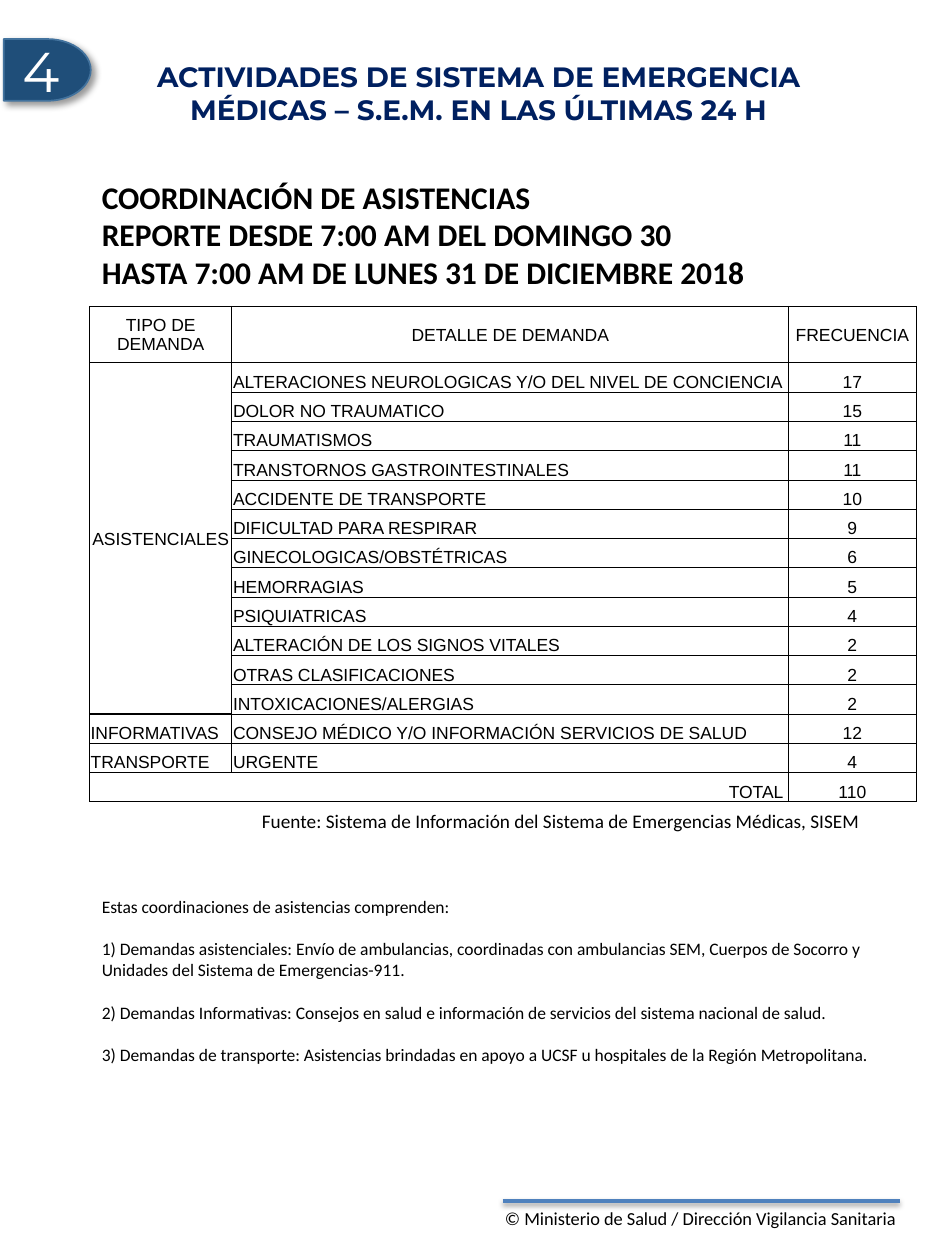
from lxml import etree
from pptx import Presentation
from pptx.dml.color import RGBColor
from pptx.enum import shapes, text
from pptx.oxml import ns
from pptx.util import Inches, Pt

COLORS = {"black": "000000", "white": "FFFFFF", "navy": "002060",
          "badge": "1F4E79", "edge": "43739E", "rule": "4F81BD"}

HEAD = ["TIPO DE DEMANDA", "DETALLE DE DEMANDA", "FRECUENCIA"]
GROUPS = [
    ("ASISTENCIALES", [
        ("ALTERACIONES NEUROLOGICAS Y/O DEL NIVEL DE CONCIENCIA", 17),
        ("DOLOR NO TRAUMATICO", 15),
        ("TRAUMATISMOS", 11),
        ("TRANSTORNOS GASTROINTESTINALES", 11),
        ("ACCIDENTE DE TRANSPORTE", 10),
        ("DIFICULTAD PARA RESPIRAR", 9),
        ("GINECOLOGICAS/OBSTÉTRICAS", 6),
        ("HEMORRAGIAS", 5),
        ("PSIQUIATRICAS", 4),
        ("ALTERACIÓN DE LOS SIGNOS VITALES", 2),
        ("OTRAS CLASIFICACIONES", 2),
        ("INTOXICACIONES/ALERGIAS", 2)]),
    ("INFORMATIVAS", [
        ("CONSEJO MÉDICO Y/O INFORMACIÓN SERVICIOS DE SALUD", 12)]),
    ("TRANSPORTE", [("URGENTE", 4)]),
]
TITLE = ["ACTIVIDADES DE SISTEMA DE EMERGENCIA MÉDICAS – S.E.M. EN LAS ÚLTIMAS 24 H"]
REPORT = ["COORDINACIÓN DE ASISTENCIAS",
          "REPORTE DESDE 7:00 AM DEL DOMINGO 30 HASTA 7:00 AM DE LUNES 31 DE DICIEMBRE 2018"]
SOURCE = ["Fuente: Sistema de Información del Sistema de Emergencias Médicas, SISEM"]
FOOTER = ["© Ministerio de Salud / Dirección Vigilancia Sanitaria"]
NOTES = [
    "Estas coordinaciones de asistencias comprenden:",
    "1) Demandas asistenciales: Envío de ambulancias, coordinadas con ambulancias SEM, "
    "Cuerpos de Socorro y Unidades del Sistema de Emergencias-911.",
    "2) Demandas Informativas: Consejos en salud e información de servicios del sistema "
    "nacional de salud.",
    "3) Demandas de transporte: Asistencias brindadas en apoyo a UCSF u hospitales de la "
    "Región Metropolitana."]

COLS = [1.13, 4.42, 1.01]
TABLE = (0.71, 2.43, sum(COLS), 3.94)
HEAD_H = 0.45

LEFT, MID, RIGHT = text.PP_ALIGN.LEFT, text.PP_ALIGN.CENTER, text.PP_ALIGN.RIGHT
TOP, CENTER, BOTTOM = (text.MSO_ANCHOR.TOP, text.MSO_ANCHOR.MIDDLE,
                       text.MSO_ANCHOR.BOTTOM)


def rgb(name):
    return RGBColor.from_string(COLORS[name])


def write(frame, lines, size, face="Calibri", color="black", bold=False,
          align=LEFT, gap=0):
    for i, line in enumerate(lines):
        para = frame.paragraphs[0] if i == 0 else frame.add_paragraph()
        para.alignment = align
        if i and gap:
            para.space_before = Pt(gap)
        run = para.add_run()
        run.text = line
        look = {"size": Pt(size), "name": face, "bold": bold}
        for key, val in look.items():
            setattr(run.font, key, val)
        run.font.color.rgb = rgb(color)


def label(slide, place, lines, size, wrap=True, anchor=TOP, pad=None, **look):
    frame = slide.shapes.add_textbox(*map(Inches, place)).text_frame
    frame.word_wrap = wrap
    frame.vertical_anchor = anchor
    if pad is not None:
        for side in ("left", "right", "top", "bottom"):
            setattr(frame, "margin_" + side, Inches(pad))
    write(frame, lines, size, **look)


def shade(shape, alpha, blur, dist, angle):
    """Give the shape an outer shadow; sizes in points, alpha in percent."""
    box = etree.SubElement(shape._element.spPr, ns.qn("a:effectLst"))
    cast = etree.SubElement(box, ns.qn("a:outerShdw"), blurRad=str(Pt(blur)),
                            dist=str(Pt(dist)), dir=str(angle * 60000),
                            rotWithShape="0")
    hue = etree.SubElement(cast, ns.qn("a:srgbClr"), val=COLORS["black"])
    etree.SubElement(hue, ns.qn("a:alpha"), val=str(alpha * 1000))


def edge(cell, thick=""):
    """Draw the four borders; the sides named in thick get 1 point."""
    props = cell._tc.get_or_add_tcPr()
    for i, side in enumerate("LRTB"):
        width = Pt(1 if side in thick else 0.5)
        line = etree.Element(ns.qn("a:ln" + side), w=str(width))
        fill = etree.SubElement(line, ns.qn("a:solidFill"))
        etree.SubElement(fill, ns.qn("a:srgbClr"), val=COLORS["black"])
        props.insert(i, line)


def fill_cell(cell, words, align, anchor=BOTTOM):
    write(cell.text_frame, [words], 10, face="Arial", align=align)
    cell.vertical_anchor = anchor


def add_grid(slide):
    count = 2 + sum(len(items) for _, items in GROUPS)
    grid = slide.shapes.add_table(count, len(COLS), *map(Inches, TABLE)).table
    grid.first_row = grid.horz_banding = False
    for col, width in zip(grid.columns, COLS):
        col.width = Inches(width)
    step = (TABLE[3] - HEAD_H) / (count - 1)
    for i, row in enumerate(grid.rows):
        row.height = Inches(step if i else HEAD_H)

    last = len(GROUPS[0][1])
    thick = {(last, 0): "B", (last + 1, 0): "T"}
    pads = {"left": 0.01, "right": 0.01, "top": 0.01, "bottom": 0}
    for r in range(count):
        for c in range(len(COLS)):
            cell = grid.cell(r, c)
            cell.fill.background()
            edge(cell, thick.get((r, c), ""))
            for side, pad in pads.items():
                setattr(cell, "margin_" + side, Inches(pad))

    for c, words in enumerate(HEAD):
        fill_cell(grid.cell(0, c), words, MID, CENTER)
    r = 1
    for kind, items in GROUPS:
        many = len(items) > 1
        first = grid.cell(r, 0)
        if many:
            first.merge(grid.cell(r + len(items) - 1, 0))
        fill_cell(first, kind, MID if many else LEFT, CENTER if many else BOTTOM)
        for words, number in items:
            fill_cell(grid.cell(r, 1), words, LEFT)
            fill_cell(grid.cell(r, 2), str(number), MID)
            r += 1
    grid.cell(r, 0).merge(grid.cell(r, 1))
    fill_cell(grid.cell(r, 0), "TOTAL ", RIGHT)
    total = sum(number for _, items in GROUPS for _, number in items)
    fill_cell(grid.cell(r, 2), str(total), MID)


def main():
    deck = Presentation()
    deck.slide_width, deck.slide_height = Inches(7.5), Inches(10)
    slide = deck.slides.add_slide(deck.slide_layouts[6])

    rule = slide.shapes.add_connector(
        shapes.MSO_CONNECTOR.STRAIGHT, *map(Inches, (3.99, 9.53, 7.14, 9.53)))
    rule.line.color.rgb = rgb("rule")
    rule.line.width = Pt(2)
    shade(rule, 38, 3.1, 1.6, 90)
    label(slide, (3.91, 9.53, 3.36, 0.45), FOOTER, 10.5, wrap=False)

    badge = slide.shapes.add_shape(shapes.MSO_SHAPE.FLOWCHART_DELAY,
                                   *map(Inches, (0.03, 0.31, 0.69, 0.49)))
    badge.fill.solid()
    badge.fill.fore_color.rgb = rgb("badge")
    badge.line.color.rgb = rgb("edge")
    badge.line.width = Pt(1)
    shade(badge, 40, 4, 3, 45)
    badge.text_frame.vertical_anchor = CENTER
    write(badge.text_frame, ["4"], 32, face="Montserrat", color="white", align=MID)

    label(slide, (0.77, 0.48, 6.06, 0.51), TITLE, 16, anchor=CENTER, pad=0.1,
          face="Montserrat", color="navy", bold=True, align=MID)
    add_grid(slide)
    label(slide, (1.98, 6.37, 4.98, 0.29), SOURCE, 11, wrap=False)
    label(slide, (0.71, 1.36, 5.44, 1.31), REPORT, 18, bold=True)
    label(slide, (0.71, 7.06, 6.44, 1.45), NOTES, 10, gap=12.2)
    deck.save("out.pptx")


if __name__ == "__main__":
    main()
